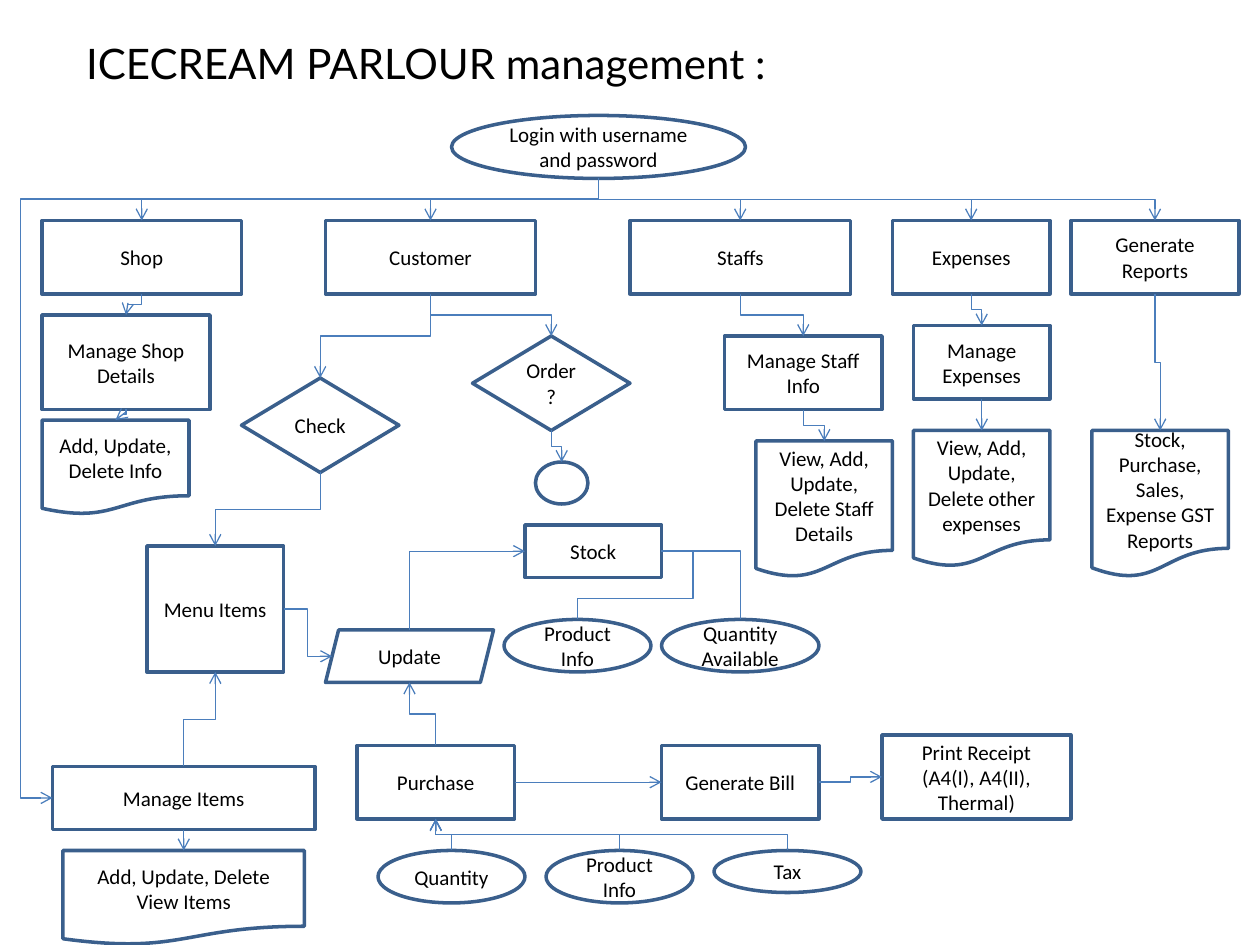
"""Build the flowchart slide of an ice cream parlour management system."""
from lxml.etree import SubElement
from pptx import Presentation
from pptx.dml.color import RGBColor
from pptx.enum.shapes import MSO_CONNECTOR, MSO_SHAPE as S
from pptx.enum.text import MSO_ANCHOR, MSO_AUTO_SIZE, PP_ALIGN
from pptx.oxml.ns import qn
from pptx.util import Inches, Pt

TITLE = "ICECREAM PARLOUR management :"
TITLE_BOX = (7, 3, 83, 6)
GRID = 12
TOP, LEFT, BOTTOM, RIGHT = range(4)
BOX, OVAL, DOC, DIAMOND = S.RECTANGLE, S.OVAL, S.FLOWCHART_DOCUMENT, S.DIAMOND
EIGHT_SITES = (OVAL, S.PARALLELOGRAM, S.FLOWCHART_CONNECTOR)

NODES = {
    "login": (OVAL, 43, 11, 28, 6, "Login with username and password"),
    "shop": (BOX, 4, 21, 19, 7, "Shop"),
    "customer": (BOX, 31, 21, 20, 7, "Customer"),
    "staffs": (BOX, 60, 21, 21, 7, "Staffs"),
    "expenses": (BOX, 85, 21, 15, 7, "Expenses"),
    "reports": (BOX, 102, 21, 16, 7, "Generate Reports"),
    "shop details": (BOX, 4, 30, 16, 9, "Manage Shop Details"),
    "staff info": (BOX, 69, 32, 15, 7, "Manage Staff Info"),
    "manage expenses": (BOX, 87, 31, 13, 7, "Manage Expenses"),
    "shop doc": (DOC, 4, 40, 14, 9, "Add, Update, Delete Info"),
    "staff doc": (DOC, 72, 42, 13, 13, "View, Add, Update, Delete Staff Details"),
    "expenses doc": (DOC, 87, 41, 13, 13, "View, Add, Update, Delete other expenses"),
    "reports doc": (DOC, 104, 41, 13, 14, "Stock, Purchase, Sales, Expense GST Reports"),
    "check": (DIAMOND, 23, 36, 15, 9, "Check"),
    "order": (DIAMOND, 45, 32, 15, 9, "Order?"),
    "junction": (S.FLOWCHART_CONNECTOR, 51, 44, 5, 4, ""),
    "menu": (BOX, 14, 52, 13, 12, "Menu Items"),
    "manage items": (BOX, 5, 73, 25, 6, "Manage Items"),
    "items doc": (DOC, 6, 81, 23, 9, "Add, Update, Delete View Items"),
    "stock": (BOX, 50, 50, 13, 5, "Stock"),
    "update": (S.PARALLELOGRAM, 31, 60, 16, 5, "Update"),
    "stock product": (OVAL, 48, 59, 14, 5, "Product Info"),
    "stock quantity": (OVAL, 63, 59, 15, 5, "Quantity Available"),
    "purchase": (BOX, 34, 71, 15, 7, "Purchase"),
    "bill": (BOX, 63, 71, 15, 7, "Generate Bill"),
    "receipt": (BOX, 84, 70, 18, 8, "Print Receipt\n(A4(I), A4(II), Thermal)"),
    "quantity": (OVAL, 36, 81, 14, 5, "Quantity"),
    "product": (OVAL, 52, 81, 14, 5, "Product Info"),
    "tax": (OVAL, 68, 81, 14, 4, "Tax"),
}

DOWN = [
    ("login", "shop"), ("login", "customer"), ("login", "staffs"),
    ("login", "expenses"), ("login", "reports"),
    ("shop", "shop details"), ("shop details", "shop doc"),
    ("staffs", "staff info"), ("staff info", "staff doc"),
    ("expenses", "manage expenses"), ("manage expenses", "expenses doc"),
    ("reports", "reports doc"), ("customer", "check"), ("customer", "order"),
    ("order", "junction"), ("check", "menu"), ("manage items", "items doc"),
]
UP = [
    ("manage items", "menu"), ("purchase", "update"), ("quantity", "purchase"),
    ("product", "purchase"), ("tax", "purchase"),
]
ACROSS = [("menu", "update"), ("purchase", "bill"), ("bill", "receipt")]
SPECIAL = [
    ("login", BOTTOM, "manage items", LEFT, True, 4, (3300, 105800)),
    ("stock", RIGHT, "stock product", TOP, False, 4, (-37500, 69200)),
    ("stock quantity", TOP, "stock", RIGHT, False, 2, ()),
    ("update", TOP, "stock", LEFT, True, 2, ()),
]
LINKS = [
    (a, start, b, end, True, 3, ())
    for pairs, start, end in ((DOWN, BOTTOM, TOP), (UP, TOP, BOTTOM), (ACROSS, RIGHT, LEFT))
    for a, b in pairs
] + SPECIAL


def rgb(value):
    """Turn a hex string into a colour."""
    return RGBColor.from_string(value)


def units(*values):
    """Turn grid steps into lengths."""
    return [Inches(v / GRID) for v in values]


def assign(obj, values):
    """Set attributes from a dict."""
    for name, value in values.items():
        setattr(obj, name, value)


def write(sp, text, frame, align, font):
    """Fill a shape with formatted text."""
    tf = sp.text_frame
    tf.text = text
    assign(tf, {"word_wrap": True, **frame})
    for p in tf.paragraphs:
        p.alignment = align
        for r in p.runs:
            assign(r.font, font)
            r.font.color.rgb = rgb("000000")


def add_node(slide, kind, x, y, w, h, text):
    """Draw one outlined flowchart node."""
    sp = slide.shapes.add_shape(kind, *units(x, y, w, h))
    sp.shadow.inherit = False
    sp.fill.background()
    sp.line.color.rgb = rgb("3A5F8C")
    sp.line.width = Pt(2)
    if text:
        write(sp, text, {"vertical_anchor": MSO_ANCHOR.MIDDLE}, PP_ALIGN.CENTER,
              {"name": "Calibri", "size": Pt(12)})
    return sp


def side_point(name, side):
    """Return the grid point at the middle of a node's side."""
    kind, x, y, w, h, _ = NODES[name]
    inset = h / 8 if kind == S.PARALLELOGRAM else 0
    return {TOP: (x + w / 2, y), LEFT: (x + inset, y + h / 2),
            BOTTOM: (x + w / 2, y + h), RIGHT: (x + w - inset, y + h / 2)}[side]


def add_link(slide, shapes, a, start, b, end, arrow, bends, adjust):
    """Join two nodes with an elbow connector."""
    (x1, y1), (x2, y2) = side_point(a, start), side_point(b, end)
    c = slide.shapes.add_connector(MSO_CONNECTOR.ELBOW, *units(x1, y1, x2, y2))
    c.begin_connect(shapes[a], start)
    c.end_connect(shapes[b], end)
    for tag, name, side in (("a:stCxn", a, start), ("a:endCxn", b, end)):
        site = side * 2 if NODES[name][0] in EIGHT_SITES else side
        next(c.element.iter(qn(tag))).set("idx", str(site))

    dx, dy = x2 - x1, y2 - y1
    w, h, turn, flip_h, flip_v = abs(dx), abs(dy), 0, dx < 0, dy < 0
    if start in (TOP, BOTTOM):
        w, h = h, w
        turn = 270 if dx * dy > 0 else 90
        flip_h = dy > 0 if turn == 270 else dy < 0
        flip_v = dx < 0 if turn == 270 else dx > 0
    box = units((x1 + x2 - w) / 2, (y1 + y2 - h) / 2, w, h)
    assign(c, dict(zip(("left", "top", "width", "height"), box)))
    sppr = c.element.spPr
    xfrm = sppr.find(qn("a:xfrm"))
    for key, value in (("rot", turn * 60000), ("flipH", int(flip_h)), ("flipV", int(flip_v))):
        xfrm.set(key, str(value))
    geom = sppr.find(qn("a:prstGeom"))
    geom.set("prst", f"bentConnector{bends}")
    for i, value in enumerate(adjust, 1):
        SubElement(geom.find(qn("a:avLst")), qn("a:gd"), name=f"adj{i}", fmla=f"val {value}")

    c.line.color.rgb = rgb("4B7EBC")
    c.line.width = Pt(0.75)
    if arrow:
        SubElement(sppr.find(qn("a:ln")), qn("a:tailEnd"), type="arrow")
    SubElement(sppr, qn("a:effectLst"))


def main():
    """Build and save the slide."""
    prs = Presentation()
    assign(prs, {"slide_width": Inches(10), "slide_height": Inches(7.5)})
    slide = prs.slides.add_slide(prs.slide_layouts[5])
    title = slide.shapes.title
    assign(title, dict(zip(("left", "top", "width", "height"), units(*TITLE_BOX))))
    write(title, TITLE,
          {"vertical_anchor": MSO_ANCHOR.TOP, "auto_size": MSO_AUTO_SIZE.SHAPE_TO_FIT_TEXT},
          PP_ALIGN.LEFT, {"name": "Lato", "size": Pt(24)})
    shapes = {name: add_node(slide, *node) for name, node in NODES.items()}
    for link in LINKS:
        add_link(slide, shapes, *link)
    prs.save("out.pptx")


if __name__ == "__main__":
    main()
